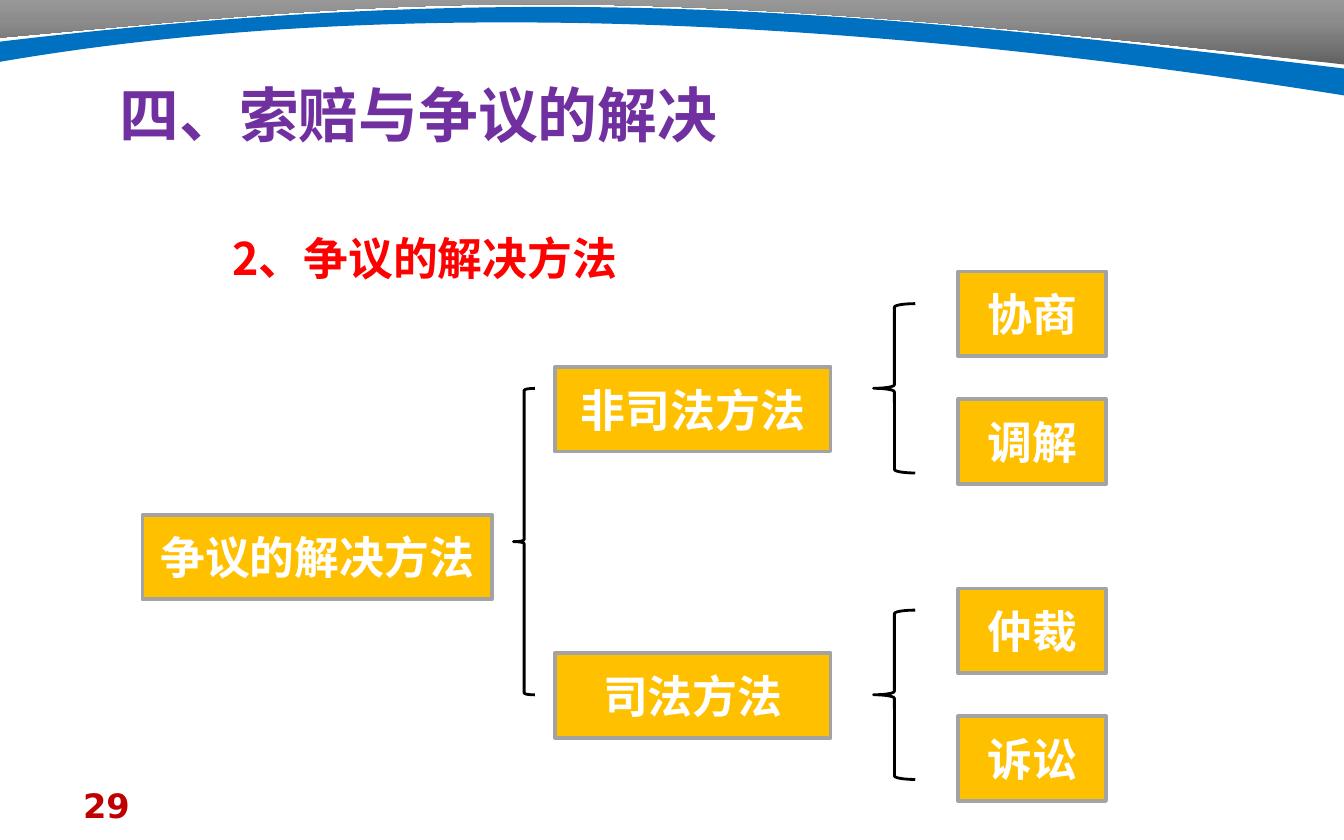
"""Build the slide on methods of settling disputes."""
from copy import deepcopy

from lxml.etree import SubElement
from pptx import Presentation
from pptx.dml.color import RGBColor
from pptx.enum.shapes import MSO_SHAPE as Shape
from pptx.enum.text import MSO_ANCHOR as Anchor, MSO_AUTO_SIZE as AutoSize, PP_ALIGN as Align
from pptx.oxml.ns import qn
from pptx.util import Inches, Pt

WHITE = RGBColor(0xFF, 0xFF, 0xFF)
BLACK = RGBColor(0, 0, 0)
AMBER = RGBColor(0xFF, 0xC0, 0x00)
GRAY = RGBColor(0xA3, 0xA3, 0xA3)
BLUE = RGBColor(0x00, 0x70, 0xC0)
PURPLE = RGBColor(0x70, 0x30, 0xA0)
RED = RGBColor(0xFF, 0x00, 0x00)
DARK_RED = RGBColor(0xC0, 0x00, 0x00)
GRAY_STOPS = [(0, RGBColor(0x62, 0x62, 0x62)), (0.5, RGBColor(0x8C, 0x8C, 0x8C)),
              (1, RGBColor(0xA6, 0xA6, 0xA6))]

HAN, LATIN = "Noto Sans CJK SC", "DejaVu Sans"
TITLE, SUBTITLE, PAGE_NUMBER = "四、索赔与争议的解决", "2、争议的解决方法", "29"
COLUMNS = [
    (1.06, 2.6, [("争议的解决方法", 3.83)]),
    (4.13, 2.05, [("非司法方法", 2.73), ("司法方法", 4.86)]),
    (7.13, 1.1, [("协商", 2.02), ("调解", 2.97), ("仲裁", 4.38), ("诉讼", 5.33)]),
]
BOX_HEIGHT = 0.63
BRACES = [(3.82, 2.89, 0.16, 2.28), (6.5, 4.54, 0.31, 1.26), (6.5, 2.26, 0.31, 1.26)]

GRAY_BAND = [(10, 0.48), [(4.43, -0.17), (3.08, 0), (0, 0.28)],
             (0, 0.19), (0, -0.02), (10, -0.02)]
BLUE_BAND = [(0, 0.31), [(4.03, -0.17), (6.52, 0.09), (10, 0.51)],
             (10, 0.71), [(6.05, 0.08), (2.67, 0), (0, 0.46)]]


def write(shape, text, size, color, font=HAN, **formats):
    frame = shape.text_frame
    frame.word_wrap = True
    para = frame.paragraphs[0]
    for name, value in formats.items():
        setattr(para, name, value)
    span = para.add_run()
    span.text = text
    for name, value in {"size": Pt(size), "bold": True, "name": font}.items():
        setattr(span.font, name, value)
    span.font.color.rgb = color
    SubElement(span.font._element, qn("a:ea"), typeface=font)
    return para


def add_text(page, place, *content, **formats):
    box = page.shapes.add_textbox(*map(Inches, place))
    return box, write(box, *content, **formats)


def add_shape(page, kind, place, line_color, line_width):
    shape = page.shapes.add_shape(kind, *map(Inches, place))
    shape.shadow.inherit = False
    shape.line.color.rgb = line_color
    shape.line.width = Pt(line_width)
    return shape


def add_band(page, outline):
    points, curve_starts = [], []
    for part in outline:
        if isinstance(part, list):
            curve_starts.append(len(points))
            points.extend(part)
        else:
            points.append(part)
    start, *others = [tuple(map(Inches, point)) for point in points]
    builder = page.shapes.build_freeform(*start, scale=1.0)
    builder.add_line_segments(others, close=True)
    band = builder.convert_to_shape()
    band.shadow.inherit = False
    band.line.fill.background()

    steps = list(band._element.spPr.find(".//" + qn("a:path")))
    for index in curve_starts:
        curve = SubElement(steps[0].getparent(), qn("a:cubicBezTo"))
        steps[index].addprevious(curve)
        for step in steps[index:index + 3]:
            curve.append(step[0])
            step.getparent().remove(step)
    return band


def fill_gradient(shape, stops, angle):
    shape.fill.gradient()
    shape.fill.gradient_angle = angle
    stop_list = shape._element.spPr.find(".//" + qn("a:gsLst"))
    stop_list.insert(1, deepcopy(stop_list[0]))
    for stop, (position, color) in zip(shape.fill.gradient_stops, stops):
        stop.position = position
        stop.color.rgb = color


def main():
    deck = Presentation()
    deck.slide_width, deck.slide_height = Inches(10), Inches(6.25)
    page = deck.slides.add_slide(deck.slide_layouts[6])

    add_text(page, (0.52, 5.79, 2.33, 0.33), PAGE_NUMBER, 18, DARK_RED, LATIN)
    fill_gradient(add_band(page, GRAY_BAND), GRAY_STOPS, 90)
    blue_band = add_band(page, BLUE_BAND)
    blue_band.fill.solid()
    blue_band.fill.fore_color.rgb = BLUE

    title, _ = add_text(page, (0.69, 0.53, 5.73, 0.64), TITLE, 32, PURPLE)
    title.text_frame.margin_left = Inches(0.2)
    subtitle, para = add_text(page, (1.3, 1.47, 7.56, 0.61), SUBTITLE, 24, RED,
                              alignment=Align.JUSTIFY, line_spacing=1.5)
    para._p.get_or_add_pPr().set("indent", str(Inches(0.33)))
    for box in (title, subtitle):
        box.text_frame.auto_size = AutoSize.SHAPE_TO_FIT_TEXT

    for left, width, methods in COLUMNS:
        for label, top in methods:
            box = add_shape(page, Shape.RECTANGLE, (left, top, width, BOX_HEIGHT), GRAY, 2)
            box.fill.solid()
            box.fill.fore_color.rgb = AMBER
            box.text_frame.vertical_anchor = Anchor.MIDDLE
            write(box, label, 24, WHITE, alignment=Align.CENTER)

    for place in BRACES:
        add_shape(page, Shape.LEFT_BRACE, place, BLACK, 1.5).fill.background()

    deck.save("out.pptx")


if __name__ == "__main__":
    main()
